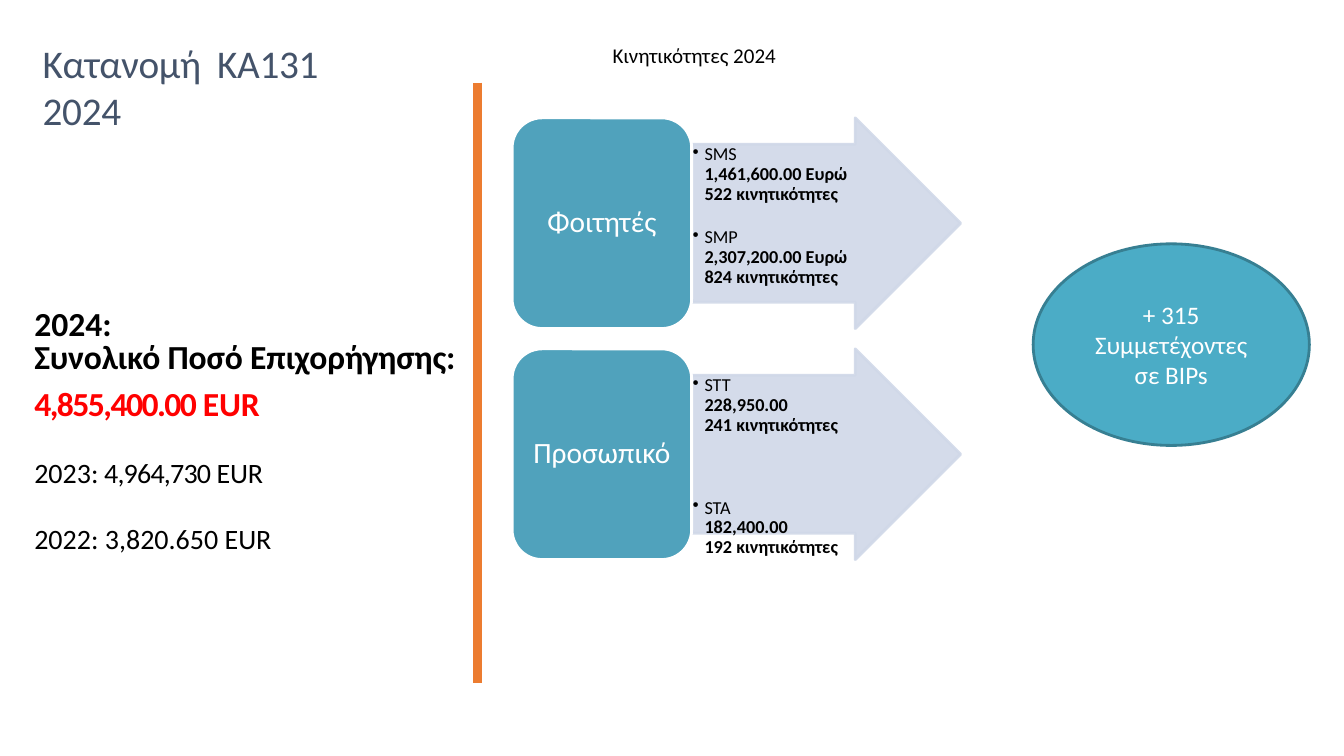
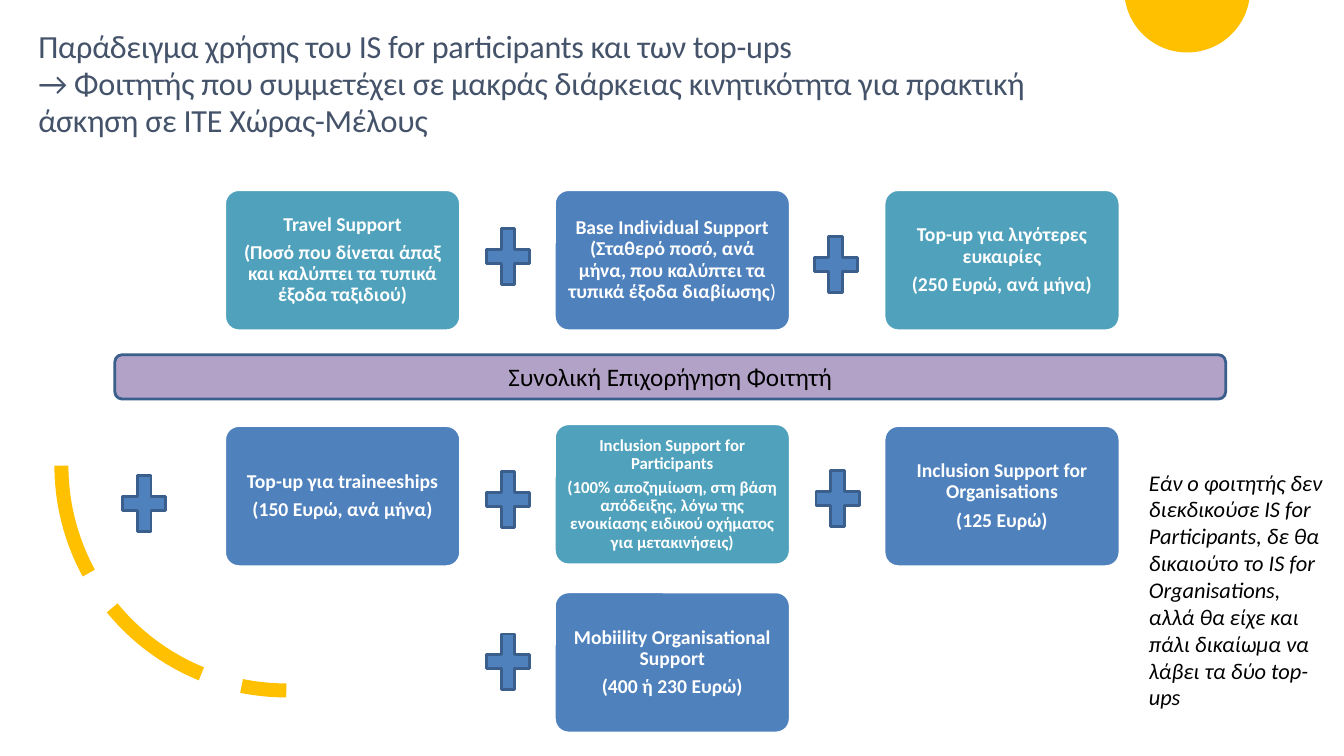
import copy
import math

import pptx
import pptx.dml.color
import pptx.enum.dml
import pptx.enum.shapes
import pptx.enum.text
import pptx.oxml
import pptx.oxml.ns
import pptx.util

Pt = pptx.util.Pt
FORMS = pptx.enum.shapes.MSO_SHAPE
ALIGN = pptx.enum.text.PP_ALIGN
ANCHOR = pptx.enum.text.MSO_ANCHOR


class Theme:
    font = "Calibri"
    white, black, red = "FFFFFF", "000000", "FF0000"
    slate, orange, gold = "44536A", "EC7C30", "FFC000"
    teal, blue, navy = "50A2BC", "4F81BD", "3A5F8C"
    aqua, rim = "4BACC6", "377F92"
    pale, lilac = "D0D8E8", "B3A2C7"
    head, topic, total = 28, 23, 24
    label, body, large = 21, 18, 20
    note, sub, card, small, fine = 16, 15, 14, 13, 12


class Deck:
    """Holds the style and the slide now being drawn."""

    def __init__(self, theme):
        self.theme = theme
        self.show = pptx.Presentation()
        self.show.slide_width, self.show.slide_height = Pt(960), Pt(540)
        self.slide = None

    def next(self):
        self.slide = self.show.slides.add_slide(self.show.slide_layouts[6])

    def color(self, code):
        return pptx.dml.color.RGBColor.from_string(code)

    def paint(self, shape, fill=None, line=None, width=2):
        shape.shadow.inherit = False
        if fill:
            shape.fill.solid()
            shape.fill.fore_color.rgb = self.color(fill)
        else:
            shape.fill.background()
        if line:
            shape.line.color.rgb = self.color(line)
            shape.line.width = Pt(width)
        else:
            shape.line.fill.background()

    def run(self, para, text, size, color, bold=False, slant=False, track=0):
        """Add a run; a newline in the text becomes a line break."""
        for num, line in enumerate(text.split("\n")):
            if num:
                para.add_line_break()
                para._p[-1].append(copy.deepcopy(para.runs[-1]._r.rPr))
            run = para.add_run()
            run.text = line
            font = run.font
            font.name, font.size = self.theme.font, Pt(size)
            font.bold, font.italic = bold, slant
            font.color.rgb = self.color(color)
            if track:
                run._r.get_or_add_rPr().set("spc", str(round(track * 100)))

    def fill(self, shape, paras, inset=(0, 0), anchor=ANCHOR.TOP, **look):
        """Write paragraphs, each a list of (text, changes to look)."""
        frame = shape.text_frame
        frame.word_wrap, frame.vertical_anchor = True, anchor
        frame.margin_left = frame.margin_right = Pt(inset[0])
        frame.margin_top = frame.margin_bottom = Pt(inset[1])
        align = look.pop("align", ALIGN.LEFT)
        pitch, after = look.pop("pitch", None), look.pop("after", 0)
        for num, runs in enumerate(paras):
            para = frame.add_paragraph() if num else frame.paragraphs[0]
            para.alignment, para.space_after = align, Pt(after)
            if pitch:
                para.line_spacing = pitch
            for text, change in runs:
                self.run(para, text, **{**look, **change})
        return frame

    def text(self, box, paras, **look):
        shape = self.slide.shapes.add_textbox(*map(Pt, box))
        return self.fill(shape, paras, **look)

    def title(self, box, text, size, **look):
        return self.text(box, [[(text, {})]], size=size,
                         color=self.theme.slate, track=-0.2, **look)

    def shape(self, form, box, fill, line, adjust=()):
        shape = self.slide.shapes.add_shape(form, *map(Pt, box))
        for num, value in enumerate(adjust):
            shape.adjustments[num] = value
        self.paint(shape, fill, line)
        return shape

    def block(self, form, box, fill, line, paras, adjust=(), **look):
        """Draw a shape with centred text."""
        shape = self.shape(form, box, fill, line, adjust)
        self.fill(shape, paras, anchor=ANCHOR.MIDDLE, align=ALIGN.CENTER,
                  **look)

    def arrow(self, box):
        shape = self.shape(FORMS.RIGHT_ARROW, box, self.theme.pale,
                           self.theme.pale, (0.75, 0.5))
        props = shape._element.spPr
        for node in props.iter(pptx.oxml.ns.qn("a:srgbClr")):
            self.child(node, "a:alpha", val="90000")

    def child(self, node, tag, **attrs):
        item = pptx.oxml.xmlchemy.OxmlElement(tag)
        for key, value in attrs.items():
            item.set(key, value)
        node.append(item)
        return item

    def bullet(self, para, hang):
        props = para._p.get_or_add_pPr()
        props.set("marL", str(Pt(hang)))
        props.set("indent", str(-Pt(hang)))
        self.child(props, "a:buChar", char="•")

    def tab(self, para, place):
        tabs = self.child(para._p.get_or_add_pPr(), "a:tabLst")
        self.child(tabs, "a:tab", pos=str(Pt(place)), algn="l")

    def rule(self, start, end, color, width):
        line = self.slide.shapes.add_connector(
            pptx.enum.shapes.MSO_CONNECTOR.STRAIGHT,
            *map(Pt, (*start, *end)))
        line.line.color.rgb = self.color(color)
        line.line.width = Pt(width)
        self.child(line._element.spPr, "a:effectLst")

    def curve(self, mid, radius, start, end, close):
        """Outline a circle's arc; angles run clockwise from the right."""
        steps = 60
        turns = [math.radians(start + (end - start) * num / steps)
                 for num in range(steps + 1)]
        dots = [(Pt(mid[0] + radius * math.cos(turn)),
                 Pt(mid[1] + radius * math.sin(turn))) for turn in turns]
        pen = self.slide.shapes.build_freeform(*dots[0])
        pen.add_line_segments(dots[1:], close=close)
        return pen.convert_to_shape()


def grants(deck):
    theme = deck.theme
    deck.next()
    plain = {"size": theme.large, "bold": False}
    red = {"color": theme.red}
    frame = deck.text((24.5, 222.5, 306, 179), [
        [("2024:", {})],
        [("Συνολικό Ποσό Επιχορήγησης:", {"track": -0.1})],
        [("4,855,400.00 ", {**red, "track": -1.1}),
         ("EUR", {**red, "track": -0.1})],
        [("2023:", plain), (" 4,964,730 ", {**plain, "track": -0.6}),
         ("EUR", {**plain, "track": -0.1})],
        [("2022: 3,820.650 EUR", plain)],
    ], size=theme.total, color=theme.black, bold=True)
    gaps = [(22.6, 1), (23.7, 0), (None, 5), (22.8, 24), (22.8, 24)]
    for para, (pitch, before) in zip(frame.paragraphs, gaps):
        para.space_before = Pt(before)
        if pitch:
            para.line_spacing = Pt(pitch)

    deck.rule((341.3, 59), (341.3, 488), theme.orange, 6.4)
    frame = deck.title((30.5, 28, 259, 70), "Κατανομή\tΚΑ131 2024", theme.head)
    deck.tab(frame.paragraphs[0], 124.6)
    deck.text((430.5, 26.6, 140, 25), [[("Κινητικότητες 2024", {})]],
              size=theme.sub, color=theme.black, inset=(7.2, 3.6))

    groups = [
        ("Φοιτητές", 17,
         [("SMS", "1,461,600.00 Ευρώ\n522 κινητικότητες"),
          ("SMP", "2,307,200.00 Ευρώ\n824 κινητικότητες")]),
        ("Προσωπικό", 45,
         [("STT", "228,950.00\n241 κινητικότητες"),
          ("STA", "182,400.00\n192 κινητικότητες")]),
    ]
    for num, (name, gap, items) in enumerate(groups):
        top = 84.2 + 165 * num
        deck.arrow((494, top, 192.2, 150.5))
        frame = deck.text(
            (494, top + 18.8, 135.5, 135),
            [[(code + "\n", {}), (sums, {"bold": True})]
             for code, sums in items],
            size=theme.small, color=theme.black, inset=(0.7, 0.7),
            pitch=0.9, after=gap)
        for para in frame.paragraphs:
            deck.bullet(para, 8.6)
        deck.block(FORMS.ROUNDED_RECTANGLE, (365.8, top, 128.2, 150.5),
                   theme.teal, theme.white, [[(name, {})]],
                   size=theme.label, color=theme.white, pitch=0.9)

    deck.block(FORMS.OVAL, (738, 174.2, 197.3, 144), theme.aqua, theme.rim,
               [[("+ 315 Συμμετέχοντες σε BIPs", {})]], inset=(7.2, 3.6),
               size=theme.body, color=theme.white)


def example(deck):
    theme = deck.theme
    deck.next()
    sun = deck.curve((848, -7.5), 45, 9.6, 170.4, True)
    deck.paint(sun, theme.gold)
    deck.title((27.4, 19.4, 776, 80),
               "Παράδειγμα χρήσης του IS for participants και των top-ups\n"
               "→ Φοιτητής που συμμετέχει σε μακράς διάρκειας κινητικότητα "
               "για πρακτική άσκηση σε ΙΤΕ Χώρας-Μέλους",
               theme.topic, pitch=Pt(26.4), inset=(0, 0.7))
    arc = deck.curve((204.5, 332.6), 160.6, 180, 90, False)
    deck.paint(arc, None, theme.gold, 10)
    arc.line.dash_style = pptx.enum.dml.MSO_LINE.LONG_DASH

    plain = {"bold": False}
    cards = [
        (0, 135.5, theme.teal, theme.card,
         [[("Travel Support", {})],
          [("(Ποσό που δίνεται άπαξ και καλύπτει τα τυπικά έξοδα "
            "ταξιδιού)", {})]]),
        (1, 135.5, theme.blue, theme.card,
         [[("Base Individual Support (Σταθερό ποσό, ανά μήνα, που "
            "καλύπτει τα τυπικά έξοδα διαβίωσης", {}), (")", plain)]]),
        (2, 135.5, theme.teal, theme.card,
         [[("Top-up για λιγότερες ευκαιρίες", {})],
          [("(250 Ευρώ, ανά μήνα)", {})]]),
        (0, 304, theme.blue, theme.card,
         [[("Top-up για traineeships", {})],
          [("(150 Ευρώ, ανά μήνα)", {})]]),
        (1, 302.7, theme.teal, theme.fine,
         [[("Inclusion Support for Participants", {})],
          [("(100% αποζημίωση, στη βάση απόδειξης, λόγω της ενοικίασης "
            "ειδικού οχήματος για μετακινήσεις)", {})]]),
        (2, 304, theme.blue, theme.card,
         [[("Inclusion Support for Organisations", {})],
          [("(125 Ευρώ)", {})]]),
        (1, 422.8, theme.blue, theme.card,
         [[("Mobiility Organisational Support", {})],
          [("(400 ή 230 Ευρώ)", {})]]),
    ]
    for col, top, tone, size, paras in cards:
        deck.block(FORMS.ROUNDED_RECTANGLE,
                   (160.5 + 235.5 * col, top, 168.5, 100.8),
                   tone, theme.white, paras, (0.1,), inset=(4.5, 2),
                   size=size, color=theme.white, bold=True,
                   pitch=0.9, after=size * 0.35)

    for left, top in [(342, 156.2), (576, 162), (82, 332.6), (342, 329.8),
                      (577.4, 329), (342, 445.7)]:
        deck.shape(FORMS.MATH_PLUS, (left, top, 41.8, 54), theme.blue,
                   theme.navy)
    deck.block(FORMS.ROUNDED_RECTANGLE, (82, 253.4, 793.5, 31.7),
               theme.lilac, theme.navy,
               [[("Συνολική Επιχορήγηση Φοιτητή", {})]],
               inset=(7.2, 3.6), size=theme.body, color=theme.black)
    deck.text((813.6, 331.2, 144, 181.4),
              [[("Εάν ο φοιτητής δεν διεκδικούσε IS for Participants, δε θα "
                 "δικαιούτο το IS for Organisations, αλλά θα είχε και πάλι "
                 "δικαίωμα να λάβει τα δύο top-ups", {})]],
              size=theme.note, color=theme.black, slant=True,
              inset=(7.2, 3.6))


def main():
    deck = Deck(Theme())
    grants(deck)
    example(deck)
    deck.show.save("out.pptx")


if __name__ == "__main__":
    main()
